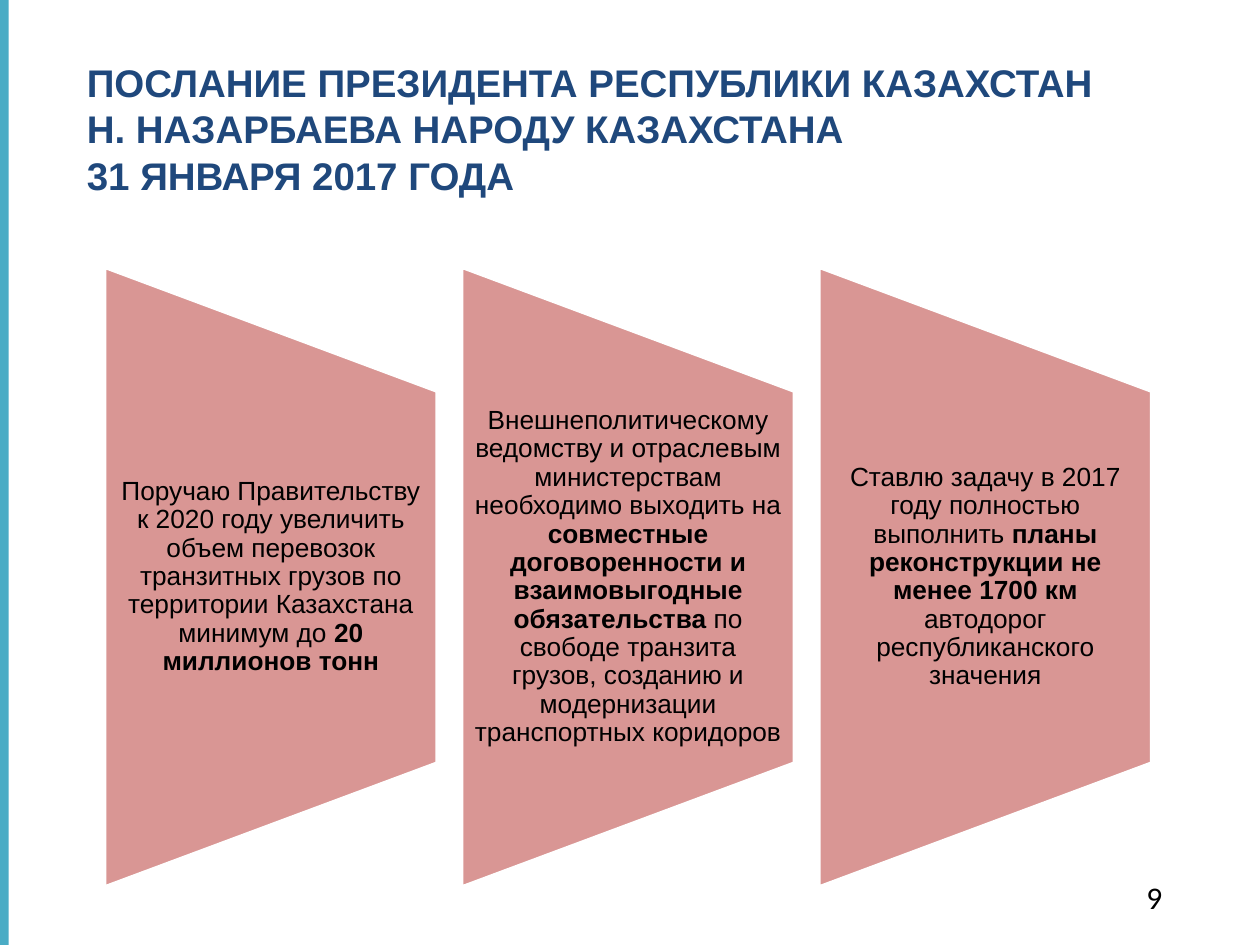
"""Builds a slide with a title and three tapered panels of goals."""
from pptx import Presentation
from pptx.dml.color import RGBColor
from pptx.enum.shapes import MSO_SHAPE
from pptx.enum.text import MSO_ANCHOR, PP_ALIGN
from pptx.util import Inches, Pt

WIDE, HIGH = 10, 7.5
LEFT, STEP, MID = 0.83, 2.835, 4.58
LONG, DEEP, TALL = 4.92, 2.64, 2.95
GOALS = [
    ["Поручаю Правительству к 2020 году увеличить объем перевозок транзитных "
     "грузов по территории Казахстана минимум до ", "20 миллионов тонн"],
    ["Внешнеполитическому ведомству и отраслевым министерствам необходимо "
     "выходить на ",
     "совместные договоренности и взаимовыгодные обязательства",
     " по свободе транзита грузов, созданию и модернизации транспортных "
     "коридоров"],
    ["Ставлю задачу в 2017 году полностью выполнить ",
     "планы реконструкции не менее 1700 км ",
     "автодорог республиканского значения"],
]

deck = Presentation()
deck.slide_width, deck.slide_height = Inches(WIDE), Inches(HIGH)
slide = deck.slides.add_slide(deck.slide_layouts[6])


def paint(form, tone):
    form.fill.solid()
    form.fill.fore_color.rgb = RGBColor.from_string(tone)


def write(box, parts, size, face, tone, side=0.0, edge=0.0):
    frame = slide.shapes.add_textbox(*map(Inches, box)).text_frame
    frame.word_wrap = True
    frame.margin_left = frame.margin_right = Inches(side)
    frame.margin_top = frame.margin_bottom = Inches(edge)
    para = frame.paragraphs[0]
    para.font.size, para.font.name = Pt(size), face
    para.font.color.rgb = RGBColor.from_string(tone)
    for spot, part in enumerate(parts):
        if len(parts) == 1:
            para.text = part
        else:
            run = para.add_run()
            run.text, run.font.bold = part, spot == 1
    return frame


bar = slide.shapes.add_shape(
    MSO_SHAPE.RECTANGLE, 0, 0, Inches(0.07), Inches(HIGH))
bar.shadow.inherit = False
paint(bar, "4AACC5")
bar.line.fill.background()

for col, goal in enumerate(GOALS):
    left = LEFT + col * STEP
    panel = slide.shapes.add_shape(
        MSO_SHAPE.FLOWCHART_MANUAL_OPERATION,
        Inches(left + (DEEP - LONG) / 2), Inches(MID - DEEP / 2),
        Inches(LONG), Inches(DEEP))
    panel.rotation = 270
    panel.shadow.inherit = False
    paint(panel, "D99694")
    paint(panel.line, "FFFFFF")
    panel.line.width = Pt(2)
    frame = write((left, MID - TALL / 2, DEEP, TALL), goal,
                  15, "Arial", "000000", side=0.1)
    frame.vertical_anchor = MSO_ANCHOR.MIDDLE
    frame.paragraphs[0].alignment = PP_ALIGN.CENTER
    frame.paragraphs[0].line_spacing = 0.9

title = write((0.69, 0.47, 8.66, 1.2),
              ["ПОСЛАНИЕ ПРЕЗИДЕНТА РЕСПУБЛИКИ КАЗАХСТАН\n"
               "Н. НАЗАРБАЕВА НАРОДУ КАЗАХСТАНА\n31 ЯНВАРЯ 2017 ГОДА"],
              22, "Arial", "1F487C")
title.paragraphs[0].font.bold = True
write((9, 6.92, 1, 0.4), ["9"], 18, "Calibri", "000000", 0.1, 0.05)

deck.save("out.pptx")
